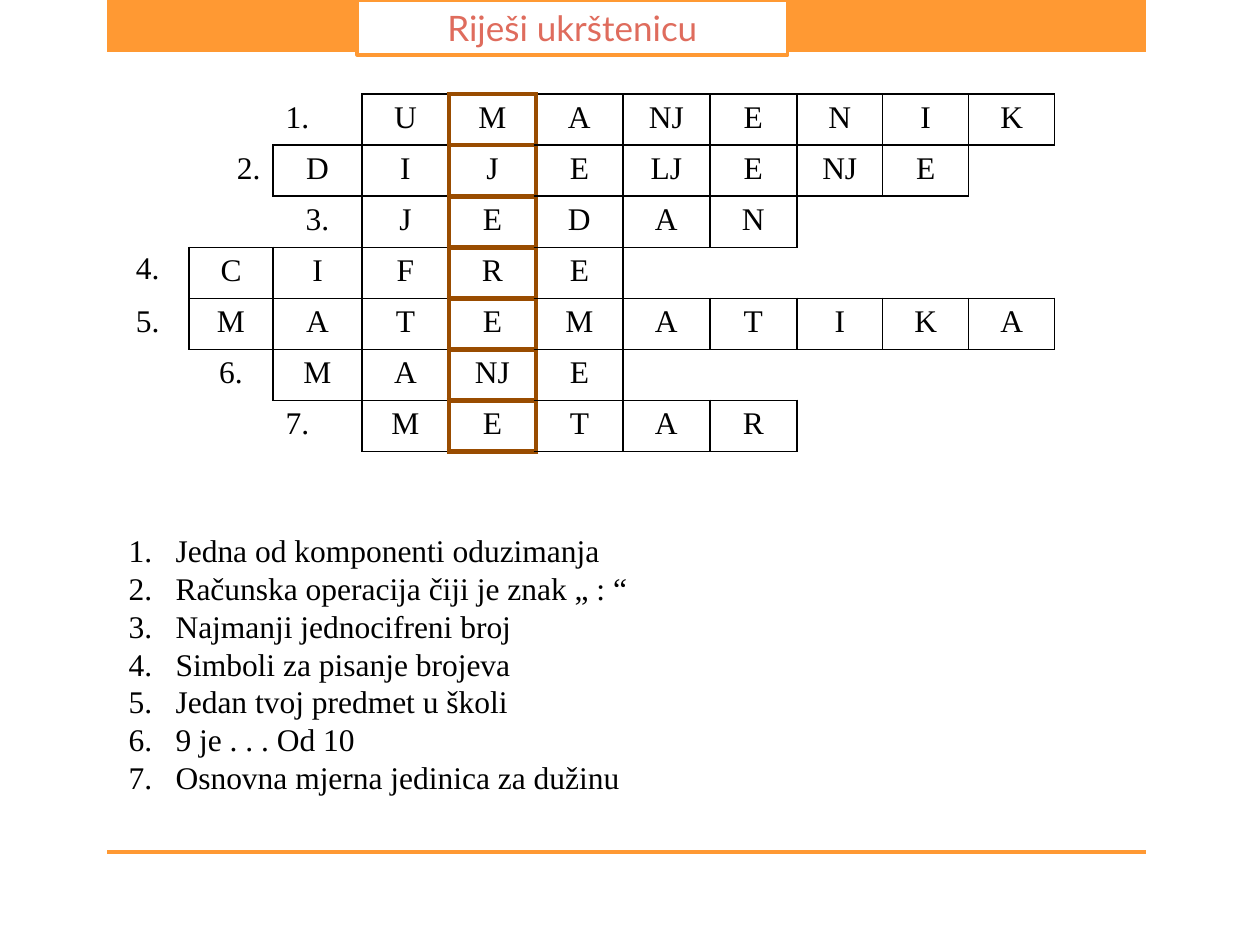
from pptx import Presentation, util as u
from pptx.dml.color import RGBColor
from pptx.enum import shapes, text
from pptx.oxml import parse_xml
from pptx.oxml.ns import nsdecls
from lxml import etree

ORANGE = RGBColor(0xFF, 0x99, 0x33)
CORAL = RGBColor(0xDF, 0x6C, 0x5D)
BROWN = RGBColor(0x99, 0x4C, 0x00)
BLACK = RGBColor(0, 0, 0)
WHITE = RGBColor(255, 255, 255)
SERIF = "Times New Roman"

LEFT, CENTER, RIGHT = text.PP_ALIGN.LEFT, text.PP_ALIGN.CENTER, text.PP_ALIGN.RIGHT

TITLE = "Riješi ukrštenicu"
ANSWERS = [
    (2, "U M A NJ E N I K"),
    (1, "D I J E LJ E NJ E"),
    (2, "J E D A N"),
    (0, "C I F R E"),
    (0, "M A T E M A T I K A"),
    (1, "M A NJ E"),
    (2, "M E T A R"),
]
LABEL_ALIGN = [LEFT, RIGHT, CENTER, LEFT, LEFT, CENTER, LEFT]
CLUES = [
    "Jedna od komponenti oduzimanja",
    "Računska operacija čiji je znak „ : “",
    "Najmanji jednocifreni broj",
    "Simboli za pisanje brojeva",
    "Jedan tvoj predmet u školi",
    "9 je . . . Od 10",
    "Osnovna mjerna jedinica za dužinu",
]
BANDS = [(107, 0, 1039, 52), (107, 850, 1039, 4)]
COLUMNS = [84, 89] + [87] * 5 + [86] * 3
KEY_COLUMN = 3
GRID_LEFT, GRID_TOP, ROW_HEIGHT = 189, 94, 51
LABEL_LEFT, LABEL_WIDTH, LABEL_INSET = 116, 73, 20
SIDES = {"L": (0, -1), "R": (0, 1), "T": (-1, 0), "B": (1, 0)}


def px(value):
    return u.Emu(value * 914400 // 126)


def place(shape, left, top, width, height):
    shape.left, shape.top, shape.width, shape.height = map(px, (left, top, width, height))


def write(para, words, size=18, font=SERIF, color=BLACK, align=LEFT):
    para.alignment = align
    span = para.add_run()
    span.text = words
    span.font.size, span.font.name = u.Pt(size), font
    span.font.color.rgb = color


def add_bands(page):
    for order, bounds in enumerate(BANDS):
        band = page.shapes.add_shape(shapes.MSO_SHAPE.RECTANGLE, *map(px, bounds))
        band.shadow.inherit = False
        band.fill.solid()
        band.fill.fore_color.rgb = ORANGE
        band.line.fill.background()
        tree = band._element.getparent()
        tree.insert(2 + order, band._element)


def add_title(page):
    title = page.shapes.title
    place(title, 357, 0, 431, 55)
    title.fill.solid()
    title.fill.fore_color.rgb = WHITE
    title.line.color.rgb = ORANGE
    title.line.width = u.Pt(1.75)
    frame = title.text_frame
    frame.auto_size = text.MSO_AUTO_SIZE.NONE
    frame.vertical_anchor = text.MSO_ANCHOR.MIDDLE
    write(frame.paragraphs[0], TITLE, size=20, font="Lato", color=CORAL, align=CENTER)


def add_clues(page):
    box = page.placeholders[1]
    place(box, 116, 525, 1050, 280)
    frame = box.text_frame
    frame.auto_size = text.MSO_AUTO_SIZE.NONE
    frame.vertical_anchor = text.MSO_ANCHOR.TOP
    for number, clue in enumerate(CLUES):
        para = frame.add_paragraph() if number else frame.paragraphs[0]
        props = para._p.get_or_add_pPr()
        props.set("marL", str(px(47)))
        props.set("indent", str(-px(47)))
        props.append(parse_xml(f'<a:buAutoNum {nsdecls("a")} type="arabicPeriod"/>'))
        para.space_before = u.Pt(0)
        para.line_spacing = u.Pt(21.6)
        write(para, clue)


def set_border(cell, side, color, points):
    paint = f'<a:solidFill><a:srgbClr val="{color}"/></a:solidFill>' if color else "<a:noFill/>"
    line = etree.fromstring(f'<a:ln{side} {nsdecls("a")} w="{u.Pt(points)}">{paint}</a:ln{side}>')
    cell._tc.get_or_add_tcPr().append(line)


def edge_style(here, there, letters):
    filled = [spot for spot in (here, there) if spot in letters]
    if any(column == KEY_COLUMN for _, column in filled):
        return BROWN, 3
    return (BLACK, 1) if filled else (None, 1)


def add_crossword(page):
    letters = {
        (row, start + step): letter
        for row, (start, word) in enumerate(ANSWERS)
        for step, letter in enumerate(word.split())
    }
    rows = len(ANSWERS)
    frame = page.shapes.add_table(rows, len(COLUMNS), px(GRID_LEFT), px(GRID_TOP),
                                  px(sum(COLUMNS)), px(ROW_HEIGHT * rows))
    grid = frame.table
    grid.first_row = grid.horz_banding = False
    for column, width in zip(grid.columns, COLUMNS):
        column.width = px(width)
    for row, (start, _) in enumerate(ANSWERS):
        grid.rows[row].height = px(ROW_HEIGHT)
        for column in range(len(COLUMNS)):
            spot = row, column
            cell = grid.cell(*spot)
            for side, (down, across) in SIDES.items():
                set_border(cell, side, *edge_style(spot, (row + down, column + across), letters))
            if column == KEY_COLUMN:
                cell.fill.solid()
                cell.fill.fore_color.rgb = WHITE
            else:
                cell.fill.background()
            para = cell.text_frame.paragraphs[0]
            para.font.size = u.Pt(18)
            if spot in letters:
                write(para, letters[spot], align=CENTER)
            elif column == start - 1:
                write(para, f"{row + 1}.", align=LABEL_ALIGN[row])
        if start == 0:
            add_outer_label(page, row)


def add_outer_label(page, row):
    top = GRID_TOP + ROW_HEIGHT * row + (row - 3) * 2 - 5
    box = page.shapes.add_textbox(px(LABEL_LEFT), px(top), px(LABEL_WIDTH), px(ROW_HEIGHT))
    box.text_frame.word_wrap = True
    box.text_frame.margin_left = px(LABEL_INSET)
    write(box.text_frame.paragraphs[0], f"{row + 1}.")


def main():
    deck = Presentation()
    deck.slide_width, deck.slide_height = px(1260), px(945)
    page = deck.slides.add_slide(deck.slide_layouts[1])
    add_bands(page)
    add_crossword(page)
    add_title(page)
    add_clues(page)
    deck.save("out.pptx")


if __name__ == "__main__":
    main()
